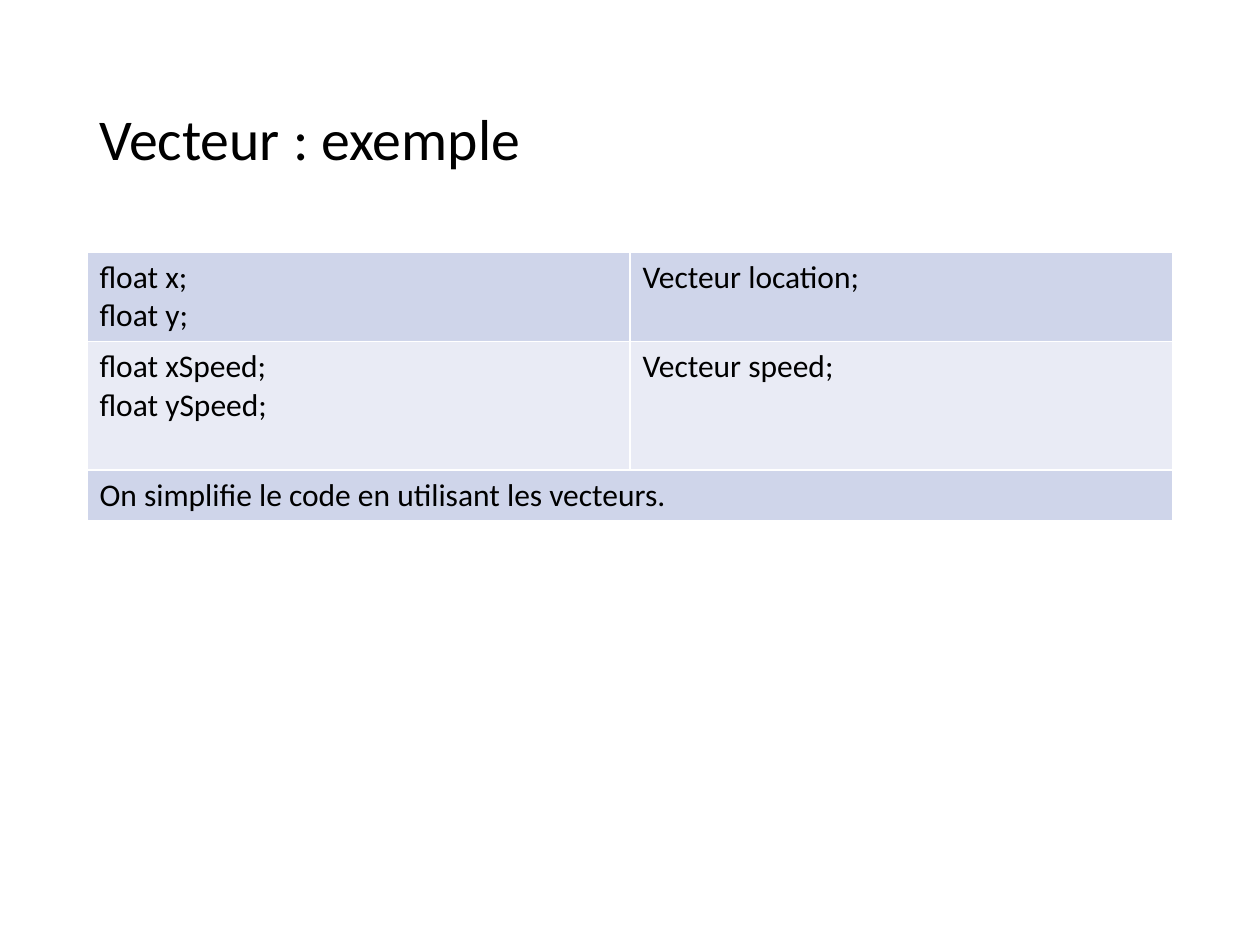
import pptx
import pptx.util
import pptx.dml.color
import pptx.enum.text
import lxml.etree
import pptx.oxml.ns

Inches, Pt = pptx.util.Inches, pptx.util.Pt
RGBColor = pptx.dml.color.RGBColor

BLACK = RGBColor(0x00, 0x00, 0x00)
WHITE = RGBColor(0xFF, 0xFF, 0xFF)
BAND_DARK = RGBColor(0xCF, 0xD5, 0xEA)
BAND_LIGHT = RGBColor(0xE9, 0xEB, 0xF5)

LEFT, WIDTH = 0.69, 8.62
ROW_HEIGHTS = [0.71, 1.02, 0.4]
ROWS = [
    ["float x;\nfloat y;", "Vecteur location;"],
    ["float xSpeed;\nfloat ySpeed;", "Vecteur speed;"],
    ["On simplifie le code en utilisant les vecteurs."],
]


class SlideBuilder:
    font = "Calibri"

    def __init__(self, prs):
        self.s = prs.slides.add_slide(prs.slide_layouts[6])

    def set_text(self, tf, text, size):
        tf.text = text
        for p in tf.paragraphs:
            p.font.name = self.font
            p.font.size = Pt(size)
            p.font.color.rgb = BLACK

    def title(self, text, left, top, width, height):
        sp = self.s.shapes.add_textbox(Inches(left), Inches(top), Inches(width), Inches(height))
        tf = sp.text_frame
        tf.word_wrap = True
        tf.vertical_anchor = pptx.enum.text.MSO_ANCHOR.MIDDLE
        self.set_text(tf, text, 33)
        tf.paragraphs[0].line_spacing = 0.9

    def border(self, cell):
        """Draw a thin white line on all four sides of the cell."""
        qn = pptx.oxml.ns.qn
        tc_pr = cell._tc.get_or_add_tcPr()
        for side in ("lnL", "lnR", "lnT", "lnB"):
            ln = lxml.etree.SubElement(tc_pr, qn("a:" + side), w=str(Pt(1)))
            fill = lxml.etree.SubElement(ln, qn("a:solidFill"))
            lxml.etree.SubElement(fill, qn("a:srgbClr"), val=str(WHITE))

    def table(self, rows, heights, left, top, width):
        """Add a banded table; a row with one text spans all columns."""
        n_cols = max(len(row) for row in rows)
        table = self.s.shapes.add_table(
            len(rows), n_cols, Inches(left), Inches(top), Inches(width), Inches(sum(heights))
        ).table
        table.first_row = table.horz_banding = False
        for i, (texts, height) in enumerate(zip(rows, heights)):
            table.rows[i].height = Inches(height)
            if len(texts) < n_cols:
                table.cell(i, 0).merge(table.cell(i, n_cols - 1))
            for j in range(n_cols):
                cell = table.cell(i, j)
                self.border(cell)
                cell.fill.solid()
                cell.fill.fore_color.rgb = BAND_LIGHT if i % 2 else BAND_DARK
                if j < len(texts):
                    self.set_text(cell.text_frame, texts[j], 18)


def main():
    prs = pptx.Presentation()
    prs.slide_width, prs.slide_height = Inches(10), Inches(7.5)
    slide = SlideBuilder(prs)
    slide.title("Vecteur : exemple", LEFT, 0.4, WIDTH, 1.45)
    slide.table(ROWS, ROW_HEIGHTS, LEFT, 2, WIDTH)
    prs.save("out.pptx")


if __name__ == "__main__":
    main()
